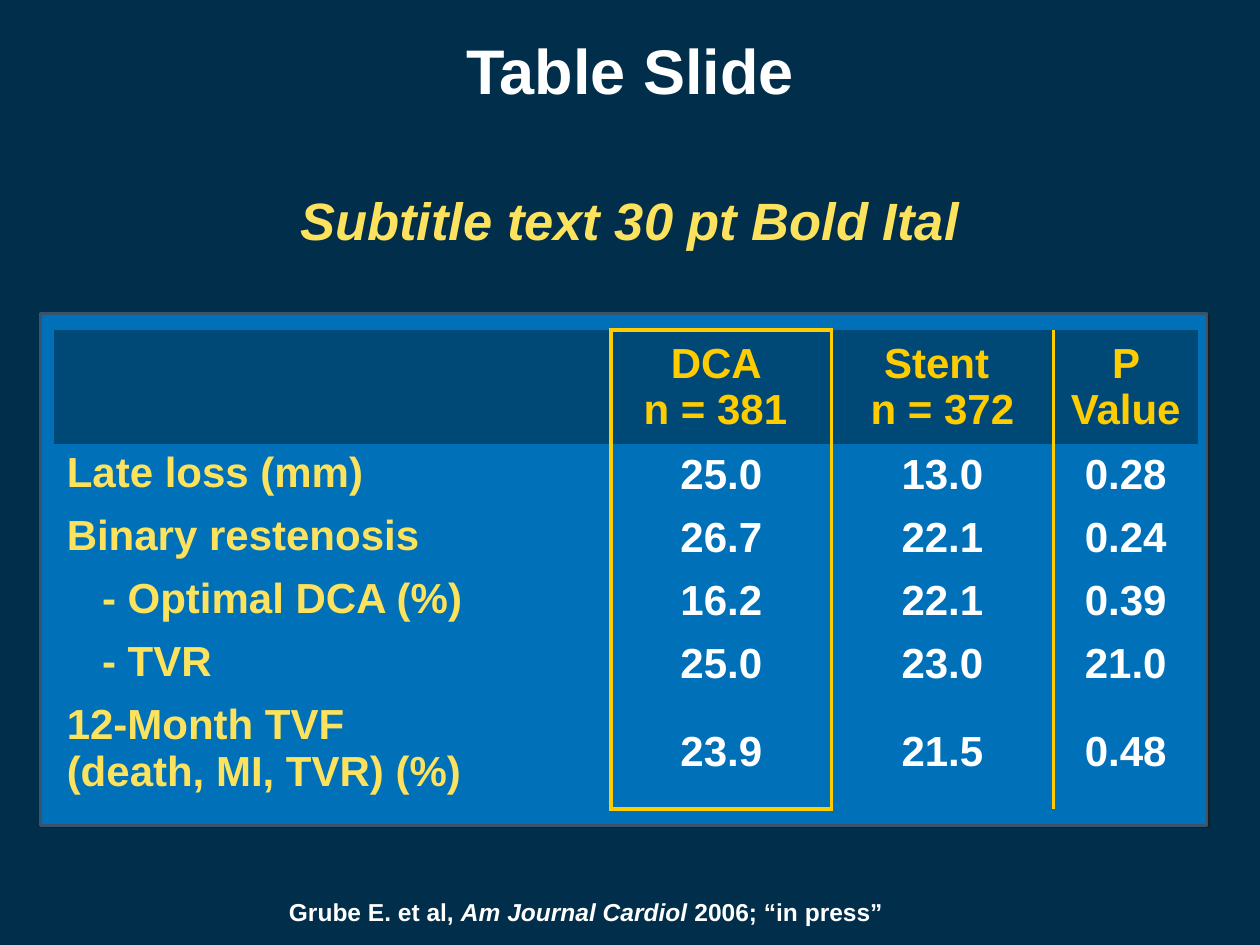
"""Build a clinical results table slide."""
import pptx
import pptx.dml.color
import pptx.enum.shapes
import pptx.enum.text
import pptx.oxml
import pptx.oxml.ns
import pptx.util

ALIGN = pptx.enum.text.PP_ALIGN
ANCHOR = pptx.enum.text.MSO_ANCHOR
NAVY, BLUE, HEADER = "002E4B", "0071B8", "004976"
GOLD, YELLOW, WHITE = "FFCC00", "FDE25E", "FFFFFF"
NO_STYLE = "{2D5ABB26-0587-4C30-8999-92F81FD0307C}"
HEADINGS = ["", "DCA \nn = 381 ", "Stent \nn = 372", "P Value"]
OUTCOMES = [
    ["Late loss (mm)", "25.0", "13.0", "0.28"],
    ["Binary restenosis", "26.7", "22.1", "0.24"],
    ["- Optimal DCA (%)", "16.2", "22.1", "0.39"],
    ["- TVR", "25.0", "23.0", "21.0"],
    ["12-Month TVF \n(death, MI, TVR) (%)", "23.9", "21.5", "0.48"],
]
DCA_COLUMN = 1


def rgb(code):
    """Return the colour for a hex string."""
    return pptx.dml.color.RGBColor.from_string(code)


def apply(target, values):
    """Set each named attribute on the target."""
    for name, value in values.items():
        setattr(target, name, value)


def drawing(markup):
    """Return an element made from DrawingML markup."""
    return pptx.oxml.parse_xml(markup.replace(
        " ", f' {pptx.oxml.ns.nsdecls("a")} ', 1))


class SlideBuilder:
    """Hold the style and current slide on a grid of 100 columns by 75 rows."""

    columns, rows = 100, 75
    font = {"name": "Arial", "bold": True}
    inset = 0.5

    def __init__(self, deck):
        """Add a title-only slide with the background colour."""
        self.deck = deck
        self.slide = deck.slides.add_slide(deck.slide_layouts[5])
        self.slide.background.fill.solid()
        self.slide.background.fill.fore_color.rgb = rgb(NAVY)

    def across(self, count):
        """Return the width of a number of grid columns."""
        return round(self.deck.slide_width * count / self.columns)

    def down(self, count):
        """Return the height of a number of grid rows."""
        return round(self.deck.slide_height * count / self.rows)

    def area(self, left, top, width, height):
        """Return a grid area as slide lengths."""
        return (self.across(left), self.down(top),
                self.across(width), self.down(height))

    def compose(self, paragraph, runs, size, color, **layout):
        """Fill a paragraph with text parts and their font differences."""
        apply(paragraph, {"alignment": ALIGN.CENTER, **layout})
        for part, extra in runs:
            for index, line in enumerate(part.split("\n")):
                if index:
                    paragraph.add_line_break()
                run = paragraph.add_run()
                run.text = line
                apply(run.font, {**self.font, "size": pptx.util.Pt(size), **extra})
                run.font.color.rgb = rgb(color)

    def margins(self, inset):
        """Return the margin values for a side inset."""
        return {**dict.fromkeys(("margin_left", "margin_right"), self.across(inset)),
                **dict.fromkeys(("margin_top", "margin_bottom"), self.down(self.inset))}

    def frame(self, shape, anchor, inset):
        """Format a text frame and return its first paragraph."""
        apply(shape.text_frame, {
            "word_wrap": True, "auto_size": pptx.enum.text.MSO_AUTO_SIZE.NONE,
            "vertical_anchor": anchor, **self.margins(inset)})
        return shape.text_frame.paragraphs[0]

    def title(self, area, text, size):
        """Place and format the title placeholder."""
        heading = self.slide.shapes.title
        apply(heading, dict(zip(("left", "top", "width", "height"), self.area(*area))))
        self.compose(self.frame(heading, ANCHOR.MIDDLE, self.inset),
                     [(text, {})], size, WHITE, line_spacing=0.9)

    def text(self, area, runs, size, color, anchor, inset, **layout):
        """Add a centred text box."""
        box = self.slide.shapes.add_textbox(*self.area(*area))
        self.compose(self.frame(box, anchor, inset), runs, size, color, **layout)

    def panel(self, area):
        """Add the blue panel with a hard offset shadow."""
        panel = self.slide.shapes.add_shape(
            pptx.enum.shapes.MSO_SHAPE.RECTANGLE, *self.area(*area))
        panel.shadow.inherit = False
        panel.fill.solid()
        panel.fill.fore_color.rgb = rgb(BLUE)
        panel.line.color.rgb = rgb("39536E")
        panel.line.width = pptx.util.Pt(1.5)
        effects = panel._element.spPr.find(pptx.oxml.ns.qn("a:effectLst"))
        effects.append(drawing(
            f'<a:outerShdw dist="{pptx.util.Pt(1.4)}" dir="2700000" algn="ctr" '
            'rotWithShape="0"><a:srgbClr val="1C1C1C"/></a:outerShdw>'))

    def borders(self, cell, sides):
        """Draw gold borders on the given sides of a cell."""
        properties = cell._tc.get_or_add_tcPr()
        for index, side in enumerate(side for side in "LRTB" if side in sides):
            properties.insert(index, drawing(
                f'<a:ln{side} w="{pptx.util.Pt(2.25)}"><a:solidFill>'
                f'<a:srgbClr val="{GOLD}"/></a:solidFill></a:ln{side}>'))

    def table(self, area, widths, heights, records, size):
        """Add the results table with one outlined column."""
        table = self.slide.shapes.add_table(
            len(records), len(widths), *self.area(*area)).table
        apply(table, {"first_row": False, "horz_banding": False})
        table._tbl.tblPr.find(pptx.oxml.ns.qn("a:tableStyleId")).text = NO_STYLE
        for column, width in zip(table.columns, widths):
            column.width = self.across(width)
        for row, height in zip(table.rows, heights):
            row.height = self.down(height)
        outline = {DCA_COLUMN - 1: "R", DCA_COLUMN: "LR", DCA_COLUMN + 1: "L"}
        for r, record in enumerate(records):
            for c, text in enumerate(record):
                self.cell(table.cell(r, c), text, size, r == 0, c == 0)
                sides = outline.get(c, "")
                if c == DCA_COLUMN:
                    sides += "T" * (r == 0) + "B" * (r == len(records) - 1)
                self.borders(table.cell(r, c), sides)

    def cell(self, cell, text, size, is_heading, is_label):
        """Fill and format one table cell."""
        apply(cell, {"vertical_anchor": ANCHOR.TOP if is_label else ANCHOR.MIDDLE,
                     **self.margins(1)})
        if is_heading:
            cell.fill.solid()
            cell.fill.fore_color.rgb = rgb(HEADER)
        else:
            cell.fill.background()
        paragraph = cell.text_frame.paragraphs[0]
        if text.startswith("-"):
            paragraph._p.get_or_add_pPr().set("marL", str(self.across(2.8)))
        color = GOLD if is_heading else YELLOW if is_label else WHITE
        self.compose(paragraph, [(text, {})] if text else [], size, color,
                     alignment=ALIGN.LEFT if is_label else ALIGN.CENTER)


def main():
    """Create and save the slide."""
    deck = pptx.Presentation()
    apply(deck, {"slide_width": pptx.util.Inches(10),
                 "slide_height": pptx.util.Inches(7.5)})
    builder = SlideBuilder(deck)
    builder.panel((3.2, 24.9, 92.6, 40.6))
    builder.title((7.5, 1.7, 85, 8.3), "Table Slide", 36)
    builder.table((4.3, 26.2, 90.8, 38), [44.2, 17.5, 17.6, 11.5],
                  [9, 5, 5, 5, 5, 9], [HEADINGS, *OUTCOMES], 24)
    builder.text((0, 14.6, 100, 6.3), [("Subtitle text 30 pt Bold Ital", {"italic": True})],
                 30, YELLOW, ANCHOR.MIDDLE, 0.5, line_spacing=0.9)
    builder.text((21.5, 70.7, 50, 3),
                 [("Grube E. et al, ", {}), ("Am Journal Cardiol ", {"italic": True}),
                  ("2006; “in press”", {})], 14, WHITE, ANCHOR.TOP, 1)
    deck.save("out.pptx")


if __name__ == "__main__":
    main()
